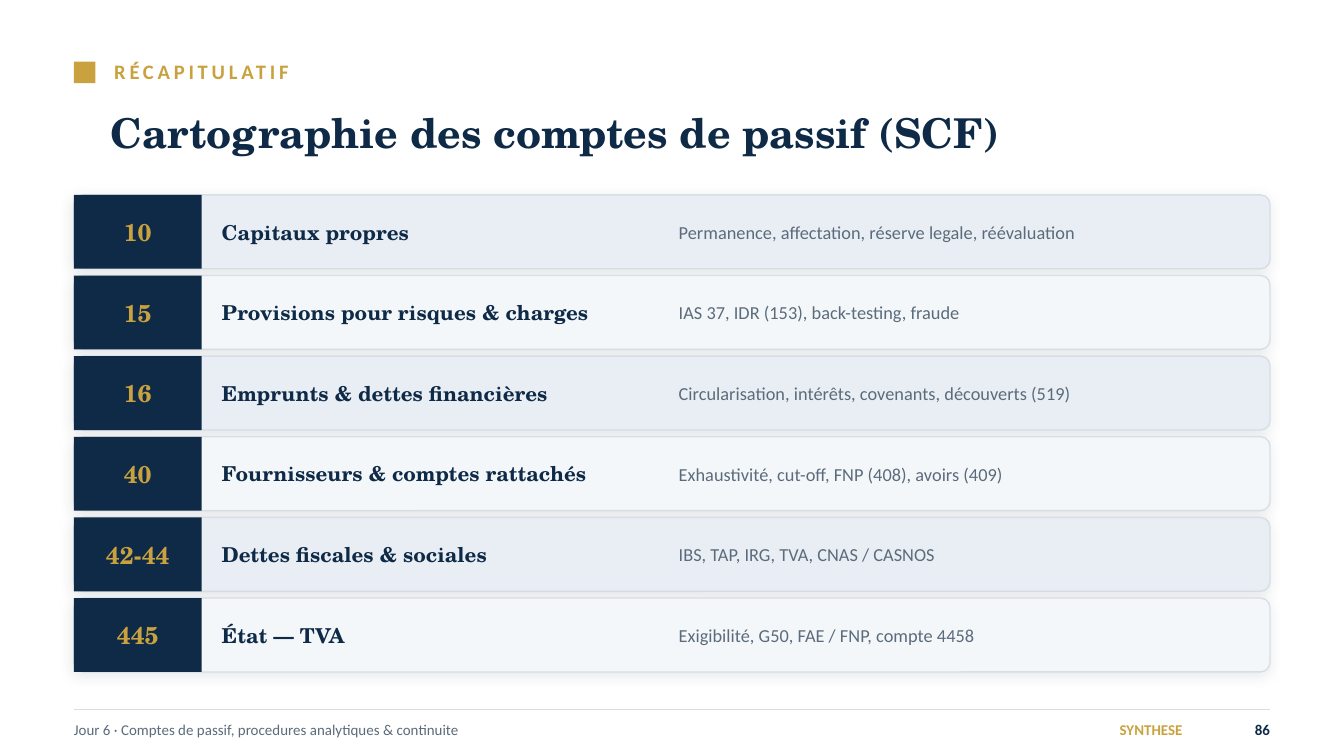
import pptx
import pptx.dml.color
import pptx.enum.shapes
import pptx.enum.text
import pptx.oxml
import pptx.oxml.ns
import pptx.util
from lxml import etree

Pt = pptx.util.Pt
RGBColor = pptx.dml.color.RGBColor
ALIGN = pptx.enum.text.PP_ALIGN
SHAPE = pptx.enum.shapes.MSO_SHAPE
qn = pptx.oxml.ns.qn

NAVY = RGBColor(0x0E, 0x2A, 0x47)
GOLD = RGBColor(0xC9, 0xA2, 0x3F)
SLATE = RGBColor(0x5B, 0x6B, 0x7B)
RULE = RGBColor(0xD7, 0xDE, 0xE6)
BAND_DARK = RGBColor(0xE9, 0xEE, 0xF4)
BAND_LIGHT = RGBColor(0xF4, 0xF7, 0xFA)
SHADOW = RGBColor(0x1B, 0x2A, 0x3A)

SERIF = "TeX Gyre Schola"
SANS = "Calibri"

LEFT, WIDTH = 39.6, 640.8
RIGHT = LEFT + WIDTH
ROW_TOP, ROW_HEIGHT, ROW_STEP = 104.4, 39.6, 43.2
CODE_WIDTH = 68.4
FOOTER_TOP, FOOTER_HEIGHT = 381.6, 18

ACCOUNTS = [
    ("10", "Capitaux propres",
     "Permanence, affectation, réserve legale, réévaluation"),
    ("15", "Provisions pour risques & charges",
     "IAS 37, IDR (153), back-testing, fraude"),
    ("16", "Emprunts & dettes financières",
     "Circularisation, intérêts, covenants, découverts (519)"),
    ("40", "Fournisseurs & comptes rattachés",
     "Exhaustivité, cut-off, FNP (408), avoirs (409)"),
    ("42-44", "Dettes fiscales & sociales",
     "IBS, TAP, IRG, TVA, CNAS / CASNOS"),
    ("445", "État — TVA",
     "Exigibilité, G50, FAE / FNP, compte 4458"),
]


def write(shape, text, *, size, color, font=SANS, bold=False,
          align=ALIGN.LEFT, spacing=None):
    """Write one formatted line, centred vertically, without margins."""
    frame = shape.text_frame
    frame.word_wrap = True
    frame.auto_size = pptx.enum.text.MSO_AUTO_SIZE.NONE
    frame.vertical_anchor = pptx.enum.text.MSO_ANCHOR.MIDDLE
    frame.margin_left = frame.margin_right = 0
    frame.margin_top = frame.margin_bottom = 0
    para = frame.paragraphs[0]
    para.alignment = align
    span = para.add_run()
    span.text = text
    span.font.name = font
    span.font.size = Pt(size)
    span.font.bold = bold
    span.font.color.rgb = color
    if spacing:
        span.font._element.set("spc", str(spacing * 100))


class Painter:
    def __init__(self, page, line_color=RULE, line_width=0.75):
        self.page = page
        self.line_color = line_color
        self.line_width = line_width

    def title(self, text, left, top, width, height, **style):
        box = self.page.shapes.title
        box.left, box.top = Pt(left), Pt(top)
        box.width, box.height = Pt(width), Pt(height)
        write(box, text, **style)

    def text(self, text, left, top, width, height, **style):
        box = self.page.shapes.add_textbox(
            Pt(left), Pt(top), Pt(width), Pt(height))
        write(box, text, **style)

    def block(self, left, top, width, height, fill, kind=SHAPE.RECTANGLE):
        shape = self.page.shapes.add_shape(
            kind, Pt(left), Pt(top), Pt(width), Pt(height))
        shape.fill.solid()
        shape.fill.fore_color.rgb = fill
        shape.line.fill.background()
        shape.shadow.inherit = False
        return shape

    def card(self, left, top, width, height, fill):
        shape = self.block(left, top, width, height, fill,
                           SHAPE.ROUNDED_RECTANGLE)
        shape.adjustments[0] = 0.127
        shape.line.color.rgb = self.line_color
        shape.line.width = Pt(self.line_width)
        # Soft shadow: 7 pt blur, 2 pt offset at 135 degrees, 10 % opaque
        effects = shape._element.spPr.find(qn("a:effectLst"))
        shadow = etree.SubElement(
            effects, qn("a:outerShdw"), blurRad=str(Pt(7)), dist=str(Pt(2)),
            dir=str(135 * 60000), algn="bl", rotWithShape="0")
        color = etree.SubElement(shadow, qn("a:srgbClr"), val=str(SHADOW))
        etree.SubElement(color, qn("a:alpha"), val="10000")

    def rule(self, left, right, top):
        line = self.page.shapes.add_connector(
            pptx.enum.shapes.MSO_CONNECTOR.STRAIGHT,
            Pt(left), Pt(top), Pt(right), Pt(top))
        line.line.color.rgb = self.line_color
        line.line.width = Pt(self.line_width)
        etree.SubElement(line._element.spPr, qn("a:effectLst"))


def main():
    deck = pptx.Presentation()
    deck.slide_width, deck.slide_height = Pt(720), Pt(405)
    page = deck.slides.add_slide(deck.slide_layouts[5])
    painter = Painter(page)

    # Heading
    painter.block(LEFT, 33.12, 11.52, 11.52, GOLD)
    painter.text("RÉCAPITULATIF", 61.2, 28.8, 619.2, 18.72,
                 size=11, color=GOLD, bold=True, spacing=2)
    painter.title("Cartographie des comptes de passif (SCF)",
                  59.04, 46.8, 626.4, 47.52,
                  size=22, color=NAVY, font=SERIF, bold=True)

    # Account rows
    for index, (code, name, topics) in enumerate(ACCOUNTS):
        top = ROW_TOP + index * ROW_STEP
        painter.card(LEFT, top, WIDTH, ROW_HEIGHT,
                     BAND_LIGHT if index % 2 else BAND_DARK)
        badge = painter.block(LEFT, top, CODE_WIDTH, ROW_HEIGHT, NAVY)
        write(badge, code, size=13, color=GOLD, font=SERIF, bold=True,
              align=ALIGN.CENTER)
        painter.text(name, 118.8, top, 237.6, ROW_HEIGHT,
                     size=11, color=NAVY, font=SERIF, bold=True)
        painter.text(topics, 363.6, top, 306, ROW_HEIGHT,
                     size=9.8, color=SLATE)

    # Footer
    painter.rule(LEFT, RIGHT, 380.16)
    painter.text("Jour 6 · Comptes de passif, procedures analytiques & continuite",
                 LEFT, FOOTER_TOP, 460.8, FOOTER_HEIGHT, size=8, color=SLATE)
    painter.text("SYNTHESE", 496.8, FOOTER_TOP, 136.8, FOOTER_HEIGHT,
                 size=8, color=GOLD, bold=True, align=ALIGN.RIGHT)
    painter.text("86", 648, FOOTER_TOP, 32.4, FOOTER_HEIGHT,
                 size=8, color=NAVY, bold=True, align=ALIGN.RIGHT)

    deck.save("out.pptx")


if __name__ == "__main__":
    main()
